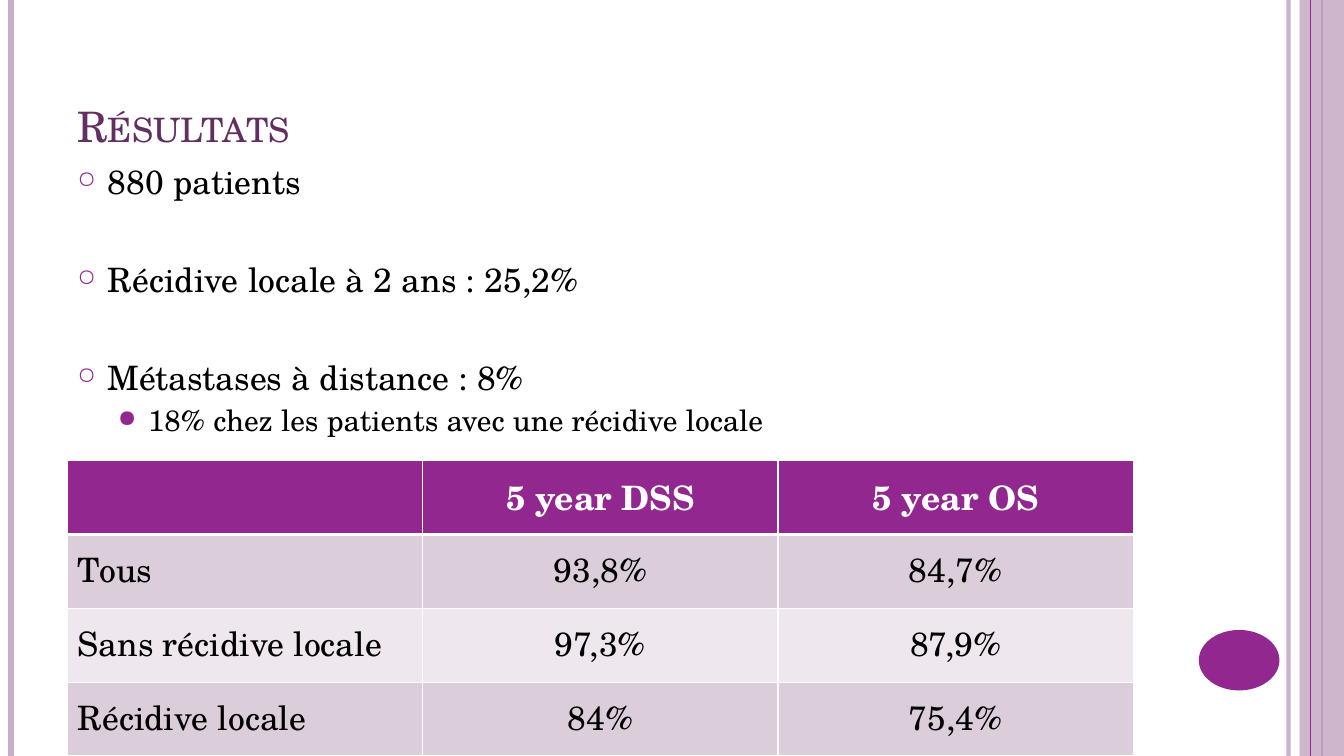
from dataclasses import dataclass

from lxml.etree import SubElement
from pptx import Presentation
from pptx.dml.color import RGBColor
from pptx.enum.shapes import MSO_CONNECTOR, MSO_SHAPE
from pptx.enum.text import MSO_ANCHOR, PP_ALIGN
from pptx.oxml.ns import qn
from pptx.util import Inches, Pt


@dataclass(frozen=True)
class Theme:
    font: str = "TeX Gyre Schola"
    accent: str = "92278F"
    pale: str = "C7ADC6"
    title: str = "632E62"
    text: str = "000000"
    white: str = "FFFFFF"
    bands: tuple = ("DCCDDB", "EEE8EE")
    title_size: int = 30
    text_size: int = 24
    detail_size: int = 21


THEME = Theme()
WIDTH, HEIGHT = 13.33, 7.5
LEFT = 0.67

# Text, level, space before: wide gaps separate the main points
POINTS = [
    ("880 patients", 0, 0),
    ("Récidive locale à 2 ans : 25,2%", 0, 41),
    ("Métastases à distance : 8%", 0, 41),
    ("18% chez les patients avec une récidive locale", 1, 4),
]
# Bullet character, its size in percent, indent, text size
LEVELS = [
    ("○", 70, 0.3, THEME.text_size),
    ("●", 80, 0.7, THEME.detail_size),
]
SURVIVAL = [
    ("", "5 year DSS", "5 year OS"),
    ("Tous", "93,8%", "84,7%"),
    ("Sans récidive locale", "97,3%", "87,9%"),
    ("Récidive locale", "84%", "75,4%"),
]


def set_alpha(element, percent):
    color = next(element.iter(qn("a:srgbClr")))
    SubElement(color, qn("a:alpha"), val=str(percent * 1000))


def add_run(paragraph, text, size, color, bold=False):
    run = paragraph.add_run()
    run.text = text
    run.font.name = THEME.font
    run.font.size = Pt(size)
    run.font.bold = bold
    run.font.color.rgb = RGBColor.from_string(color)
    return run


def add_text_frame(slide, box, anchor=MSO_ANCHOR.TOP):
    frame = slide.shapes.add_textbox(*map(Inches, box)).text_frame
    frame.word_wrap = True
    frame.vertical_anchor = anchor
    return frame


def add_rule(slide, x, top, height, width, color, alpha=None):
    rule = slide.shapes.add_connector(
        MSO_CONNECTOR.STRAIGHT, Inches(x), Inches(top), Inches(x), Inches(top + height))
    rule.line.color.rgb = RGBColor.from_string(color)
    rule.line.width = Pt(width)
    properties = rule._element.spPr
    SubElement(properties, qn("a:effectLst"))
    if alpha:
        set_alpha(properties, alpha)


def add_filled_shape(slide, kind, box, color, alpha=None):
    shape = slide.shapes.add_shape(kind, *map(Inches, box))
    shape.shadow.inherit = False
    shape.line.fill.background()
    shape.fill.solid()
    shape.fill.fore_color.rgb = RGBColor.from_string(color)
    if alpha:
        set_alpha(shape._element.spPr, alpha)


def add_decoration(slide, box):
    left, top, width, height = box
    right = left + width
    # Edge rules and the band on the right
    add_rule(slide, right - 0.55, top, height, 3, THEME.pale, 93)
    add_rule(slide, left + 0.11, top, height, 4.5, THEME.pale)
    add_rule(slide, right - 0.22, top, height, 1.5, THEME.accent)
    add_filled_shape(slide, MSO_SHAPE.RECTANGLE, (right - 0.44, top, 0.44, height),
                     THEME.pale, 87)
    add_rule(slide, right - 0.33, top, height, 0.75, THEME.accent)
    # Page number oval
    add_filled_shape(slide, MSO_SHAPE.OVAL, (right - 1.44, top + height - 1.25, 0.8, 0.6),
                     THEME.accent)


def add_title(slide, box, text):
    frame = add_text_frame(slide, box, MSO_ANCHOR.BOTTOM)
    run = add_run(frame.paragraphs[0], text, THEME.title_size, THEME.title)
    run.font._element.set("cap", "small")


def add_bullet(paragraph, character, percent, indent):
    properties = paragraph._p.get_or_add_pPr()
    properties.set("marL", str(Inches(indent)))
    properties.set("indent", str(Inches(-0.3)))
    color = SubElement(properties, qn("a:buClr"))
    SubElement(color, qn("a:srgbClr"), val=THEME.accent)
    SubElement(properties, qn("a:buSzPct"), val=str(percent * 1000))
    SubElement(properties, qn("a:buChar"), char=character)


def add_points(slide, box, points):
    frame = add_text_frame(slide, box)
    for index, (text, level, space) in enumerate(points):
        paragraph = frame.add_paragraph() if index else frame.paragraphs[0]
        character, percent, indent, size = LEVELS[level]
        add_bullet(paragraph, character, percent, indent)
        paragraph.level = level
        paragraph.space_before = Pt(space)
        add_run(paragraph, text, size, THEME.text)


def style_cell(cell, fill, top, bottom):
    # Borders come before the fill in the cell properties
    properties = cell._tc.get_or_add_tcPr()
    for side, width in (("L", 1), ("R", 1), ("T", top), ("B", bottom)):
        border = SubElement(properties, qn(f"a:ln{side}"), w=str(Pt(width)))
        solid = SubElement(border, qn("a:solidFill"))
        SubElement(solid, qn("a:srgbClr"), val=THEME.white)
    cell.fill.solid()
    cell.fill.fore_color.rgb = RGBColor.from_string(fill)
    cell.margin_top = Inches(0.1)


def add_survival_table(slide, box, rows):
    table = slide.shapes.add_table(len(rows), len(rows[0]), *map(Inches, box)).table
    for row_index, values in enumerate(rows):
        header = row_index == 0
        fill = THEME.accent if header else THEME.bands[(row_index - 1) % 2]
        for column_index, value in enumerate(values):
            cell = table.cell(row_index, column_index)
            style_cell(cell, fill, 3 if row_index == 1 else 1, 3 if header else 1)
            if value:
                paragraph = cell.text_frame.paragraphs[0]
                paragraph.alignment = PP_ALIGN.CENTER if column_index else PP_ALIGN.LEFT
                add_run(paragraph, value, THEME.text_size,
                        THEME.white if header else THEME.text, header)


def main():
    presentation = Presentation()
    presentation.slide_width = Inches(WIDTH)
    presentation.slide_height = Inches(HEIGHT)
    slide = presentation.slides.add_slide(presentation.slide_layouts[6])
    add_decoration(slide, (0, 0, WIDTH, HEIGHT))
    add_title(slide, (LEFT, 0.3, 10.89, 1.25), "Résultats")
    add_points(slide, (LEFT, 1.55, 10.89, 5.53), POINTS)
    add_survival_table(slide, (LEFT, 4.57, 10.57, 2.93), SURVIVAL)
    presentation.save("out.pptx")


if __name__ == "__main__":
    main()
